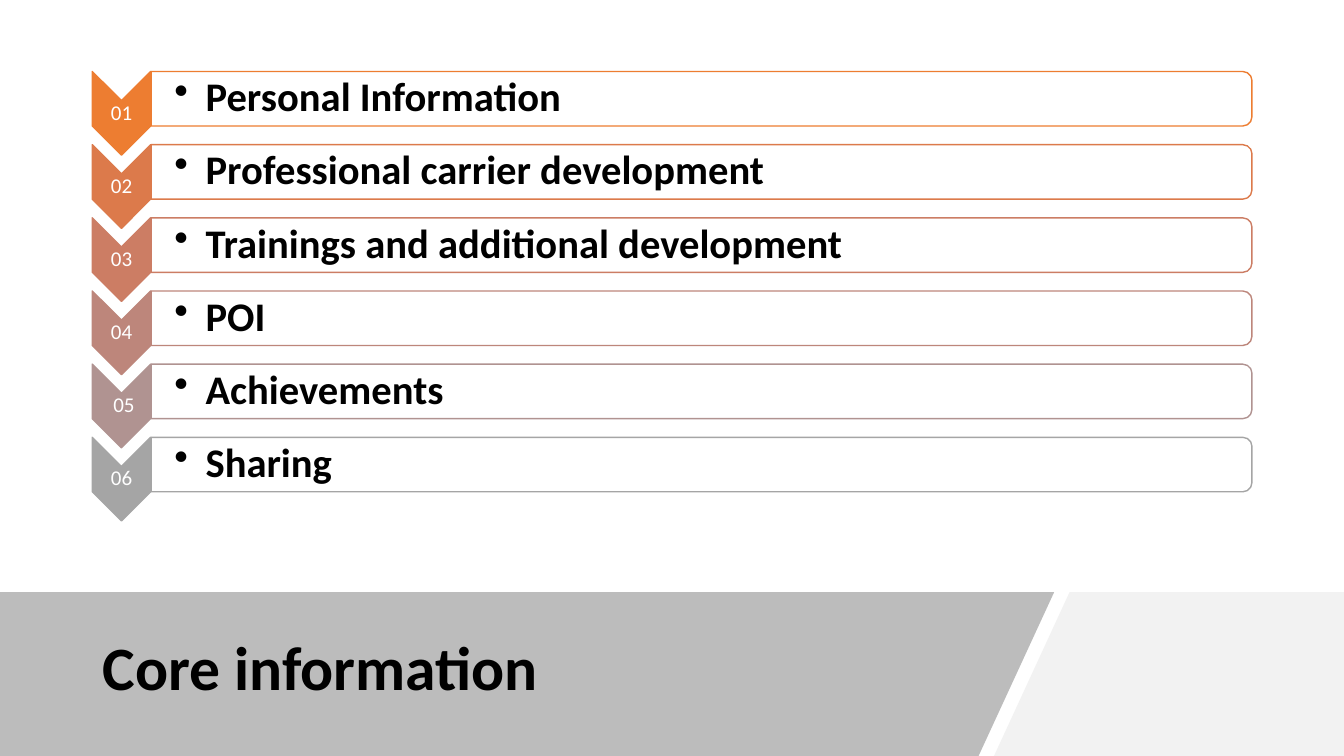
from dataclasses import dataclass

from lxml.etree import SubElement
from pptx import Presentation
from pptx.dml.color import RGBColor
from pptx.enum.shapes import MSO_SHAPE
from pptx.enum.text import MSO_ANCHOR, MSO_AUTO_SIZE, PP_ALIGN
from pptx.oxml.ns import qn
from pptx.util import Pt

COLORS = {
    "text": "000000", "white": "FFFFFF", "band": "595959", "corner": "F2F2F2",
    "01": "ED7D31", "02": "DC7A4B", "03": "CC7D64",
    "04": "BD867B", "05": "B09391", "06": "A5A5A5",
}
FONT = "Calibri"
FIRST_ROW_Y = 70.56
ROW_PITCH = 52.26
BULLET_INDENT = 22.32


@dataclass
class Item:
    """One numbered line of the agenda."""
    number: str
    label: str
    color: str


ITEMS = [
    Item("01", "Personal Information", "01"),
    Item("02", "Professional carrier development", "02"),
    Item("03", "Trainings and additional development", "03"),
    Item("04", "POI", "04"),
    Item(" 05", "Achievements", "05"),
    Item("06", "Sharing", "06"),
]


def rgb(name: str) -> RGBColor:
    """Return the named colour."""
    return RGBColor.from_string(COLORS[name])


def paint(sp, fill: str, line: str | None = None, opacity: int = 100) -> None:
    """Set fill, outline and opacity and drop the shadow."""
    sp.shadow.inherit = False
    sp.fill.solid()
    sp.fill.fore_color.rgb = rgb(fill)
    if opacity < 100:
        clr = sp.element.spPr.find(qn("a:solidFill"))[0]
        SubElement(clr, qn("a:alpha"), val=str(opacity * 1000))
    if line:
        sp.line.color.rgb = rgb(line)
        sp.line.width = Pt(1)
    else:
        sp.line.fill.background()


def add_polygon(s, points: list[tuple[float, float]], fill: str, opacity: int = 100) -> None:
    """Draw a closed outline given in points."""
    fb = s.shapes.build_freeform(*points[0], scale=Pt(1))
    fb.add_line_segments(points[1:], close=True)
    paint(fb.convert_to_shape(), fill, opacity=opacity)


def add_turned(s, kind, cx: float, cy: float, w: float, h: float):
    """Add a shape centred on a point and turned a quarter clockwise."""
    sp = s.shapes.add_shape(kind, Pt(cx - w / 2), Pt(cy - h / 2), Pt(w), Pt(h))
    sp.rotation = 90
    return sp


def add_run(p, text: str, size: float, color: str, bold: bool = False) -> None:
    """Append a formatted run to a paragraph."""
    p.line_spacing = 0.9
    r = p.add_run()
    r.text = text
    r.font.name = FONT
    r.font.size = Pt(size)
    r.font.bold = bold
    r.font.color.rgb = rgb(color)


def add_text_box(s, x: float, y: float, w: float, h: float, left: float, pad: float):
    """Add a wrapped, vertically centred text box and return its paragraph."""
    tf = s.shapes.add_textbox(Pt(x), Pt(y), Pt(w), Pt(h)).text_frame
    tf.word_wrap = True
    tf.vertical_anchor = MSO_ANCHOR.MIDDLE
    tf.margin_left = Pt(left)
    tf.margin_top = tf.margin_right = tf.margin_bottom = Pt(pad)
    return tf.paragraphs[0]


def add_bullet(p) -> None:
    """Give a paragraph a hanging round bullet."""
    pPr = p._p.get_or_add_pPr()
    pPr.set("marL", str(Pt(BULLET_INDENT)))
    pPr.set("indent", str(-Pt(BULLET_INDENT)))
    SubElement(pPr, qn("a:buChar"), char="•")


def add_item(s, item: Item, cy: float) -> None:
    """Draw the chevron, number, bar and label of one line."""
    chevron = add_turned(s, MSO_SHAPE.CHEVRON, 86.76, cy + 10.4, 59.76, 41.76)
    paint(chevron, item.color, item.color)
    p = add_text_box(s, 66, cy + 1.4, 41.76, 18, 0.72, 0.72)
    p.alignment = PP_ALIGN.CENTER
    add_run(p, item.number, 15, "white")

    bar = add_turned(s, MSO_SHAPE.ROUND_2_SAME_RECTANGLE, 501.12, cy, 38.88, 786.24)
    paint(bar, "white", item.color, opacity=90)
    p = add_text_box(s, 108, cy - 17.8, 784.08, 35.28, 16.56, 1.44)
    add_bullet(p)
    add_run(p, item.label, 29, "text", bold=True)


def set_title(s, text: str) -> None:
    """Place the title in front of the bottom band."""
    sp = s.shapes.title
    sp.element.getparent().append(sp.element)
    sp.left, sp.top, sp.width, sp.height = Pt(66), Pt(435.6), Pt(636), Pt(86.4)
    tf = sp.text_frame
    tf.auto_size = MSO_AUTO_SIZE.NONE
    tf.word_wrap = True
    tf.vertical_anchor = MSO_ANCHOR.MIDDLE
    p = tf.paragraphs[0]
    p.alignment = PP_ALIGN.LEFT
    p.space_after = Pt(6)
    add_run(p, text, 44, "text", bold=True)


def main() -> None:
    """Build and save the slide."""
    prs = Presentation()
    prs.slide_width, prs.slide_height = Pt(960), Pt(540)
    s = prs.slides.add_slide(prs.slide_layouts[5])
    add_polygon(s, [(763.92, 422.64), (960, 422.64), (960, 540), (709.92, 540)], "corner")
    add_polygon(s, [(0, 422.64), (753.12, 422.64), (699.12, 540), (0, 540)], "band", 40)
    set_title(s, "Core information")
    for i, item in enumerate(ITEMS):
        add_item(s, item, FIRST_ROW_Y + i * ROW_PITCH)
    prs.save("out.pptx")


if __name__ == "__main__":
    main()
